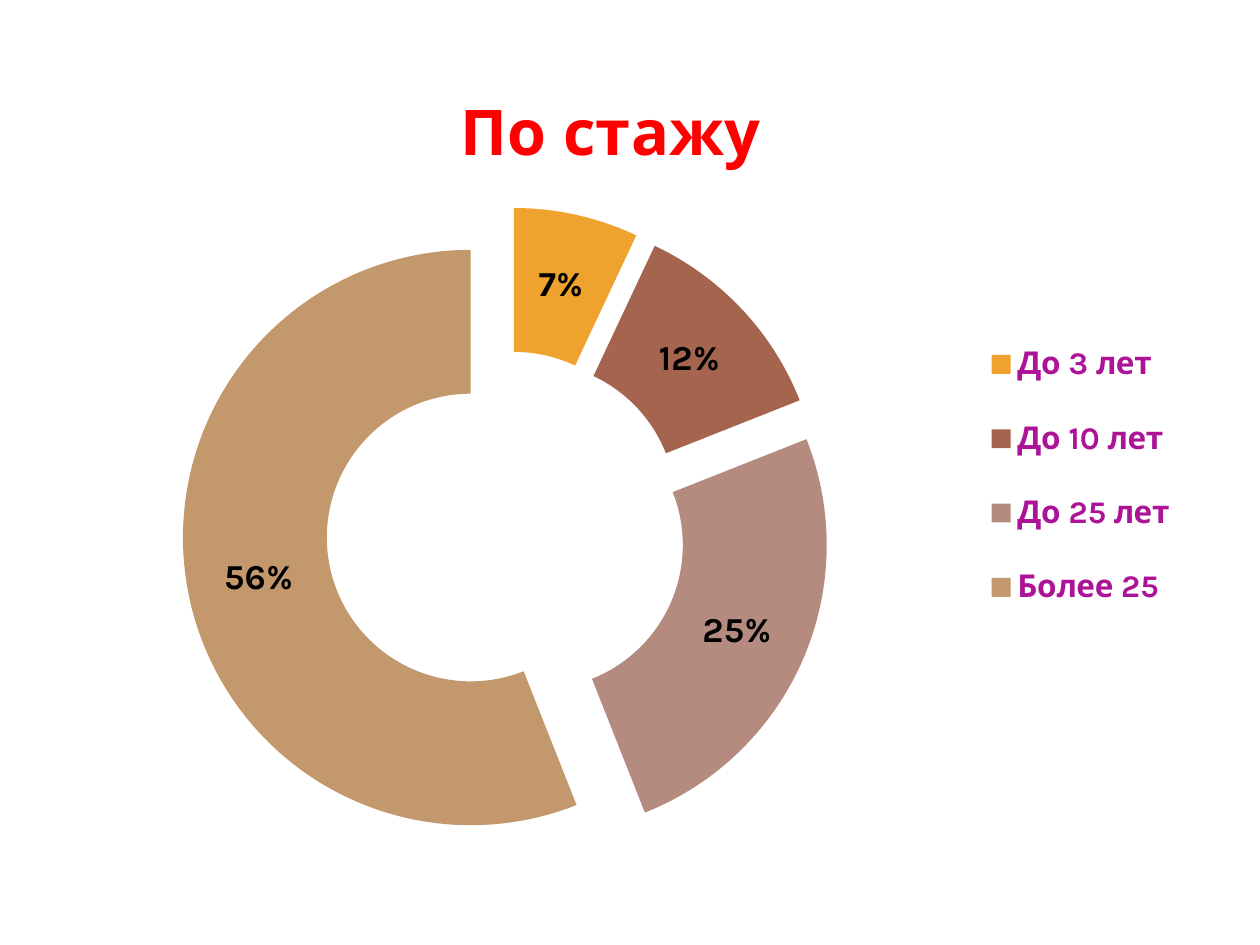
from lxml.etree import SubElement
from pptx import Presentation
from pptx.chart.data import CategoryChartData
from pptx.dml.color import RGBColor
from pptx.enum.chart import XL_CHART_TYPE, XL_LEGEND_POSITION
from pptx.oxml.ns import qn
from pptx.util import Inches, Pt

COLORS = {"text": "000000", "title": "FF0000", "legend": "AD1397"}
TENURE = {
    "До 3 лет": (7, "F0A22E"),
    "До 10 лет": (12, "A5644E"),
    "До 25 лет": (25, "B58B80"),
    "Более 25": (56, "C3986D"),
}
FONT_NAME = "Karla"
EXPLOSION = 25
HOLE_SIZE = 50
LEGEND_BOX = {"x": 0.8, "y": 0.31, "w": 0.17, "h": 0.41}  # shares of the chart


def style_font(font, color, **values):
    for name, value in {"name": FONT_NAME, **values}.items():
        setattr(font, name, value)
    font.color.rgb = RGBColor.from_string(COLORS[color])


def style_title(chart, text):
    frame = chart.chart_title.text_frame
    frame.text = text
    style_font(frame.paragraphs[0].runs[0].font, "title", size=Pt(36), bold=True)
    chart.chart_title.include_in_layout = False


def style_legend(chart):
    chart.has_legend = True
    legend = chart.legend
    legend.position = XL_LEGEND_POSITION.RIGHT
    legend.include_in_layout = False
    style_font(legend.font, "legend", size=Pt(18), bold=True)

    layout = legend._element.find(qn("c:layout"))
    if layout is None:
        layout = SubElement(legend._element, qn("c:layout"))
        legend._element.find(qn("c:legendPos")).addnext(layout)
    manual = SubElement(layout, qn("c:manualLayout"))
    for axis in "xy":
        SubElement(manual, qn(f"c:{axis}Mode"), val="edge")
    for side, share in LEGEND_BOX.items():
        SubElement(manual, qn(f"c:{side}"), val=str(share))


def style_ring(plot):
    """Colour and pull apart the ring's slices and label them in percent."""
    plot.vary_by_categories = True
    series = plot.series[0]
    for index, (_, color) in enumerate(TENURE.values()):
        fill = series.points[index].format.fill
        fill.solid()
        fill.fore_color.rgb = RGBColor.from_string(color)

    plot.has_data_labels = True
    labels = plot.data_labels
    for name, value in {"show_percentage": True, "show_value": False,
                        "number_format": "0%",
                        "number_format_is_linked": False}.items():
        setattr(labels, name, value)
    style_font(labels.font, "text", size=Pt(20), bold=True)

    explosion = SubElement(series._element, qn("c:explosion"), val=str(EXPLOSION))
    series._element.find(qn("c:dPt")).addprevious(explosion)
    ring = series._element.getparent()
    ring.find(qn("c:holeSize")).set("val", str(HOLE_SIZE))


def add_tenure_chart(slide, left, top, width, height):
    data = CategoryChartData()
    data.categories = list(TENURE)
    data.add_series("Series 1", [value for value, _ in TENURE.values()])
    chart = slide.shapes.add_chart(
        XL_CHART_TYPE.DOUGHNUT_EXPLODED, left, top, width, height, data).chart
    style_font(chart.font, "text", size=Pt(10))
    style_title(chart, "По стажу")
    style_legend(chart)
    style_ring(chart.plots[0])


def main():
    presentation = Presentation()
    presentation.slide_width = Inches(10)
    presentation.slide_height = Inches(7.5)
    slide = presentation.slides.add_slide(presentation.slide_layouts[6])
    add_tenure_chart(slide, 0, Inches(0.44), Inches(9.69), Inches(6.48))
    presentation.save("out.pptx")


if __name__ == "__main__":
    main()
